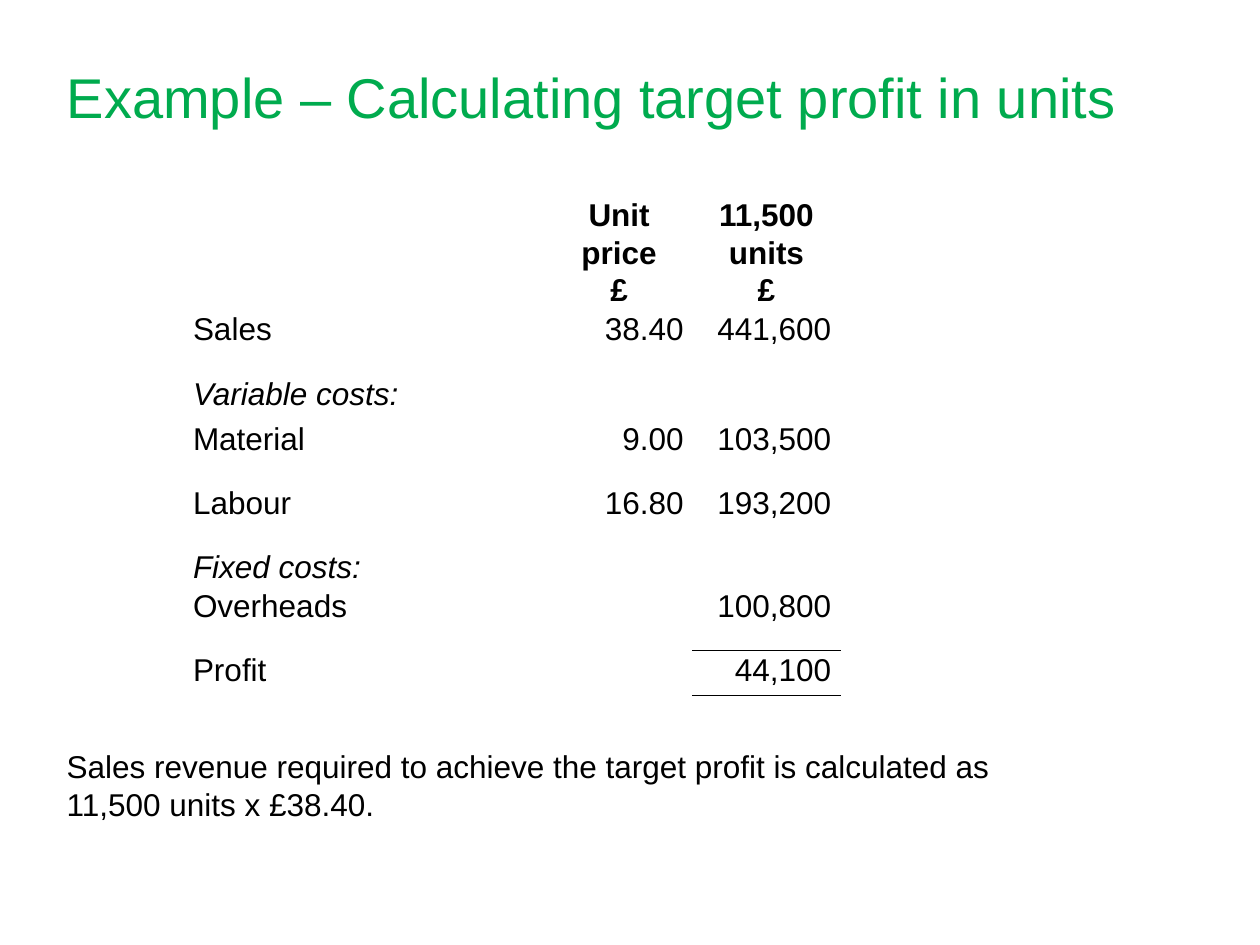
from lxml import etree
from pptx import Presentation
from pptx.dml.color import RGBColor
from pptx.enum.text import MSO_ANCHOR, MSO_AUTO_SIZE, PP_ALIGN
from pptx.oxml.ns import qn
from pptx.util import Pt

LEFT, CENTER, RIGHT = PP_ALIGN.LEFT, PP_ALIGN.CENTER, PP_ALIGN.RIGHT
MIDDLE, TOP = MSO_ANCHOR.MIDDLE, MSO_ANCHOR.TOP
NO_FIT = MSO_AUTO_SIZE.NONE
FIT_SHAPE = MSO_AUTO_SIZE.SHAPE_TO_FIT_TEXT

FONT = "Arial"
COLORS = {"title": "00AB4E", "text": "000000"}
COL_WIDTHS = [206.6, 84.2, 84.2]
HEADER_HEIGHT = 65.5
ROWS = [
    (36.7, "Sales", "38.40", "441,600"),
    (25.9, "Variable costs:", "", ""),
    (36.7, "Material", "9.00", "103,500"),
    (36.7, "Labour", "16.80", "193,200"),
    (20.2, "Fixed costs:", "", ""),
    (36.7, "Overheads", "", "100,800"),
    (25.9, "Profit", "", "44,100"),
]
HEADER = (HEADER_HEIGHT, "", "Unit price\n£", "11,500 units\n£")


def format_text(tf, size, color="text", align=LEFT, spacing=None, bold=False, italic=False):
    for p in tf.paragraphs:
        p.alignment = align
        if spacing:
            p.line_spacing = spacing
        for r in p.runs:
            r.font.name = FONT
            r.font.size = Pt(size)
            r.font.bold = bold
            r.font.italic = italic
            r.font.color.rgb = RGBColor.from_string(COLORS[color])


def add_border(cell, tag):
    ln = etree.SubElement(cell._tc.get_or_add_tcPr(), qn(tag), w=str(Pt(1)))
    fill = etree.SubElement(ln, qn("a:solidFill"))
    etree.SubElement(fill, qn("a:srgbClr"), val=COLORS["text"])


def add_title(s, text):
    sp = s.shapes.title
    sp.left, sp.top, sp.width, sp.height = Pt(31), Pt(9.4), Pt(657.4), Pt(90.7)
    tf = sp.text_frame
    tf.text = text
    tf.word_wrap = True
    tf.auto_size = NO_FIT
    tf.vertical_anchor = MIDDLE
    format_text(tf, 32, "title")


def fill_cell(cell, text, align, bold, italic, borders):
    cell.margin_left = cell.margin_right = Pt(5.2)
    cell.margin_top = cell.margin_bottom = 0
    cell.vertical_anchor = TOP
    for tag in borders:
        add_border(cell, tag)
    cell.fill.background()
    cell.text_frame.text = text
    format_text(cell.text_frame, 18, align=align, spacing=1.07, bold=bold, italic=italic)


def add_profit_table(s):
    rows = [HEADER] + ROWS
    height = sum(row[0] for row in rows)
    table = s.shapes.add_table(len(rows), len(COL_WIDTHS), Pt(105.1), Pt(111.6),
                               Pt(sum(COL_WIDTHS)), Pt(height)).table
    table.first_row = False
    table.horz_banding = False
    for col, width in zip(table.columns, COL_WIDTHS):
        col.width = Pt(width)
    for i, (row_height, *texts) in enumerate(rows):
        table.rows[i].height = Pt(row_height)
        for j, text in enumerate(texts):
            align = LEFT if j == 0 else CENTER if i == 0 else RIGHT
            borders = []
            if j == 2 and texts[0] == "Overheads":
                borders = ["a:lnB"]
            elif j == 2 and texts[0] == "Profit":
                borders = ["a:lnT", "a:lnB"]
            fill_cell(table.cell(i, j), text, align, i == 0, text.endswith(":"), borders)


def add_note(s, text):
    tf = s.shapes.add_textbox(Pt(31), Pt(423.4), Pt(583.9), Pt(51.1)).text_frame
    tf.word_wrap = True
    tf.auto_size = FIT_SHAPE
    tf.text = text
    format_text(tf, 18)


def main():
    prs = Presentation()
    prs.slide_width, prs.slide_height = Pt(720), Pt(540)
    s = prs.slides.add_slide(prs.slide_layouts[5])
    add_title(s, "Example – Calculating target profit in units")
    add_profit_table(s)
    add_note(s, "Sales revenue required to achieve the target profit is calculated as "
                "11,500 units x £38.40.")
    prs.save("out.pptx")


if __name__ == "__main__":
    main()
